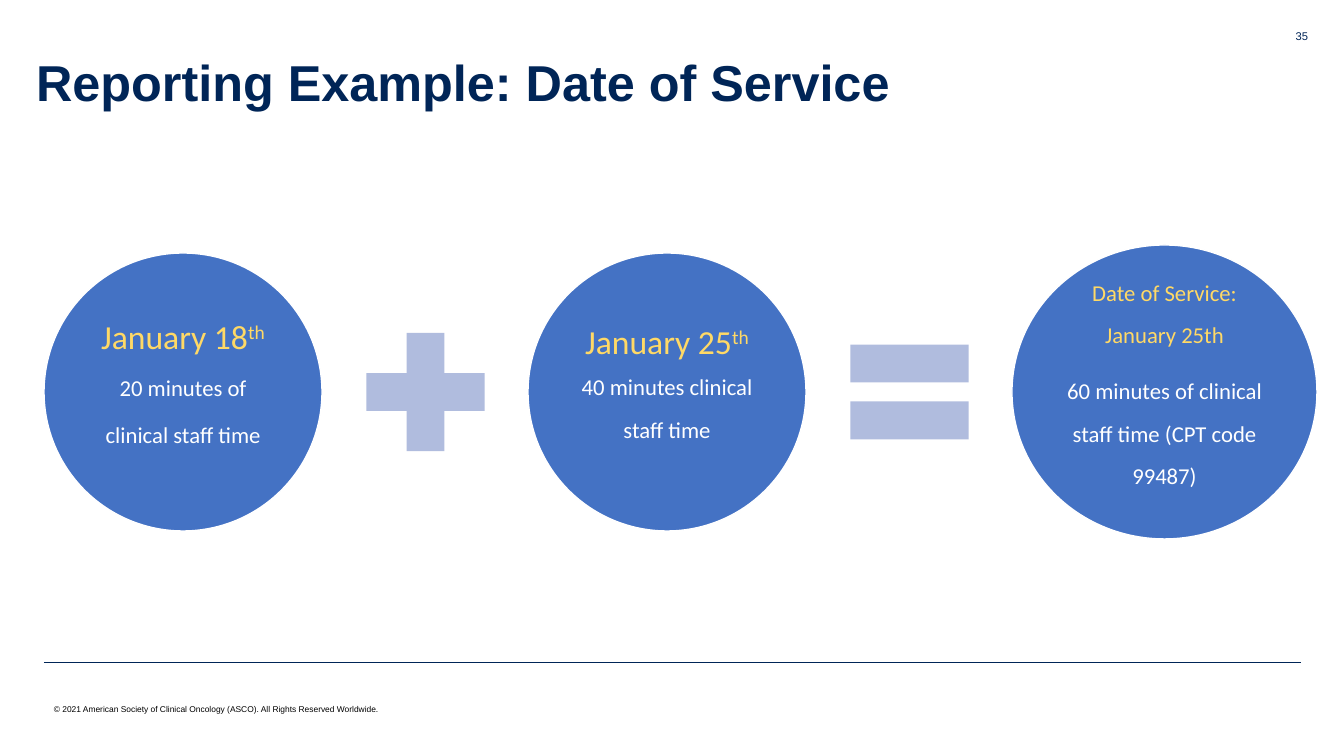
from dataclasses import dataclass

from lxml.etree import SubElement
from pptx import Presentation
from pptx.dml.color import RGBColor
from pptx.enum.shapes import MSO_CONNECTOR, MSO_SHAPE
from pptx.enum.text import MSO_ANCHOR, MSO_AUTO_SIZE, PP_ALIGN
from pptx.oxml.ns import qn
from pptx.util import Emu, Pt


@dataclass(frozen=True)
class Theme:
    navy: RGBColor = RGBColor(0x00, 0x25, 0x57)
    circle: RGBColor = RGBColor(0x44, 0x72, 0xC4)
    operator: RGBColor = RGBColor(0xB0, 0xBC, 0xDE)
    gold: RGBColor = RGBColor(0xFF, 0xD9, 0x66)
    white: RGBColor = RGBColor(0xFF, 0xFF, 0xFF)
    black: RGBColor = RGBColor(0x00, 0x00, 0x00)
    heading_font: str = "Arial"
    body_font: str = "Calibri"
    title_size: int = 36
    date_size: int = 24
    raised_size: int = 28
    number_size: int = 8
    footer_size: int = 6


THEME = Theme()
SUPERSCRIPT = "30000"


def px(length):
    return Emu(round(length * 914400 / 100.8))


def place(shape, box):
    shape.left, shape.top, shape.width, shape.height = map(px, box)


def set_font(font, name, size, color, bold=False):
    font.name, font.size, font.bold = name, Pt(size), bold
    font.color.rgb = color


def add_run(paragraph, text, raised=False):
    run = paragraph.add_run()
    run.text = text
    if raised:
        run._r.get_or_add_rPr().set("baseline", SUPERSCRIPT)


def add_title(slide, box, text):
    title = slide.shapes.title
    place(title, box)
    frame = title.text_frame
    frame.text = text
    frame.auto_size = MSO_AUTO_SIZE.NONE
    frame.vertical_anchor = MSO_ANCHOR.MIDDLE
    frame.margin_bottom = px(67)
    paragraph = frame.paragraphs[0]
    paragraph.alignment = PP_ALIGN.LEFT
    paragraph.line_spacing = 0.9
    set_font(paragraph.font, THEME.heading_font, THEME.title_size, THEME.navy, True)


def add_label(slide, box, text, size, color, alignment, anchor):
    label = slide.shapes.add_textbox(*map(px, box))
    frame = label.text_frame
    frame.word_wrap = True
    frame.vertical_anchor = anchor
    paragraph = frame.paragraphs[0]
    add_run(paragraph, text)
    paragraph.alignment = alignment
    set_font(paragraph.font, THEME.heading_font, size, color)


def add_rule(slide, left, right, top):
    rule = slide.shapes.add_connector(
        MSO_CONNECTOR.STRAIGHT, px(left), px(top), px(right), px(top))
    rule.line.color.rgb = THEME.navy
    rule.line.width = Pt(0.25)
    SubElement(rule._element.spPr, qn("a:effectLst"))


def add_figure(slide, kind, box, color):
    figure = slide.shapes.add_shape(kind, *map(px, box))
    figure.shadow.inherit = False
    figure.fill.solid()
    figure.fill.fore_color.rgb = color
    figure.line.fill.background()
    return figure


def add_circle(slide, box, date_runs, detail, date_size, detail_tight=True):
    circle = add_figure(slide, MSO_SHAPE.OVAL, box, THEME.circle)
    circle.line.color.rgb = THEME.white
    circle.line.width = Pt(1)
    frame = circle.text_frame
    frame.word_wrap = True
    frame.vertical_anchor = MSO_ANCHOR.MIDDLE
    frame.margin_left = frame.margin_right = px(3)
    frame.margin_top = frame.margin_bottom = px(3)
    paragraphs = (
        (frame.paragraphs[0], date_runs, date_size, THEME.gold, True),
        (frame.add_paragraph(), [(detail, True)], THEME.raised_size, THEME.white, detail_tight),
    )
    for paragraph, runs, size, color, tight in paragraphs:
        for text, raised in runs:
            add_run(paragraph, text, raised)
        paragraph.alignment = PP_ALIGN.CENTER
        paragraph.line_spacing = 0.9 if tight else 1.0
        paragraph.space_after = Pt(round(size * 0.35, 1) if tight else 0)
        set_font(paragraph.font, THEME.body_font, size, color)


def add_equation(slide, box):
    left, top, width, height = box
    middle = top + height / 2
    diameter, operator_size, pitch = 278, 161, 484
    operator_offset = diameter + 23
    terms = (
        ("January 18", "20 minutes of clinical staff time", MSO_SHAPE.MATH_PLUS, False),
        ("January 25", "40 minutes clinical staff time", MSO_SHAPE.MATH_EQUAL, True),
    )
    for index, (date, detail, operator, tight) in enumerate(terms):
        term_left = left + index * pitch
        add_circle(
            slide, (term_left, middle - diameter / 2, diameter, diameter),
            [(date, False), ("th", True)], detail, THEME.date_size, tight)
        add_figure(
            slide, operator,
            (term_left + operator_offset, middle - operator_size / 2,
             operator_size, operator_size),
            THEME.operator)
    total_left = left + len(terms) * pitch
    add_circle(
        slide, (total_left, top, left + width - total_left, height),
        [("Date of Service: January 25th", True)],
        "60 minutes of clinical staff time (CPT code 99487)", THEME.raised_size)


def add_footer(slide, box, text):
    left, top, width, height = box
    add_rule(slide, left, left + width, top)
    add_label(slide, (left, top + 27, 454, height - 27), text,
              THEME.footer_size, THEME.black, PP_ALIGN.LEFT, MSO_ANCHOR.MIDDLE)


def main():
    presentation = Presentation()
    presentation.slide_width, presentation.slide_height = px(1344), px(756)
    slide = presentation.slides.add_slide(presentation.slide_layouts[5])
    add_title(slide, (26, 43, 1159, 146), "Reporting Example: Date of Service")
    add_equation(slide, (44, 245, 1273, 294))
    add_footer(
        slide, (44, 662, 1257, 67),
        "© 2021 American Society of Clinical Oncology (ASCO). All Rights Reserved Worldwide.")
    add_label(slide, (1224, 24, 94, 40), "35", THEME.number_size,
              THEME.navy, PP_ALIGN.RIGHT, MSO_ANCHOR.TOP)
    presentation.save("out.pptx")


if __name__ == "__main__":
    main()
